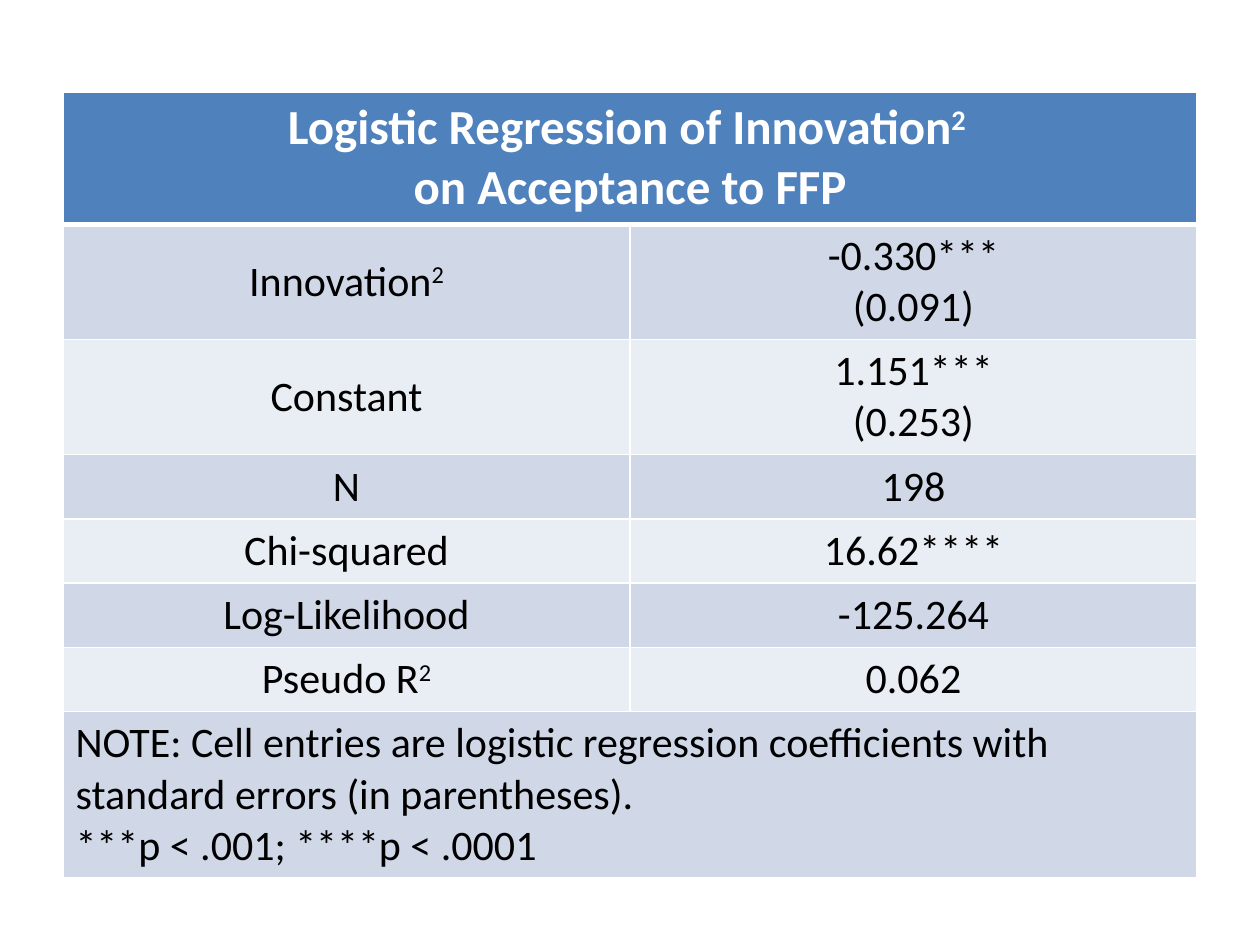
import pptx
import pptx.dml.color
import pptx.enum.text
import pptx.oxml
import pptx.oxml.ns
import pptx.util

Inches = pptx.util.Inches
CENTER = pptx.enum.text.PP_ALIGN.CENTER
LEFT = pptx.enum.text.PP_ALIGN.LEFT
MIDDLE = pptx.enum.text.MSO_ANCHOR.MIDDLE
TOP = pptx.enum.text.MSO_ANCHOR.TOP

TITLE = "Logistic Regression of Innovation^2 ^\non Acceptance to FFP"
RESULTS = [
    ("Innovation^2^", "-0.330***\n(0.091)"),
    ("Constant", "1.151***\n(0.253)"),
    ("N", "198"),
    ("Chi-squared", "16.62****"),
    ("Log-Likelihood", "-125.264"),
    ("Pseudo R^2^", "0.062"),
]
NOTE = (
    "NOTE: Cell entries are logistic regression coefficients with "
    "standard errors (in parentheses).\n***p < .001; ****p < .0001"
)
ROW_HEIGHTS = [1.03, 0.91, 0.91, 0.51, 0.51, 0.51, 0.51, 1.31]
BANDS = ["D0D8E8", "E9EDF4"]
TITLE_FONT = {"name": "Calibri", "size": pptx.util.Pt(28), "bold": True}
BODY_FONT = {"name": "Calibri", "size": pptx.util.Pt(24), "bold": False}


def color(value):
    return pptx.dml.color.RGBColor.from_string(value)


def set_borders(cell, bottom_width):
    properties = cell._tc.get_or_add_tcPr()
    widths = {"lnL": 1, "lnR": 1, "lnT": 1, "lnB": bottom_width}
    for position, (side, width) in enumerate(widths.items()):
        line = pptx.oxml.parse_xml(
            f'<a:{side} {pptx.oxml.ns.nsdecls("a")} w="{pptx.util.Pt(width)}">'
            '<a:solidFill><a:srgbClr val="FFFFFF"/></a:solidFill>'
            f"</a:{side}>"
        )
        properties.insert(position, line)


def write_paragraph(paragraph, text, font, font_color, alignment):
    paragraph.alignment = alignment
    for position, part in enumerate(text.split("^")):
        if not part:
            continue
        run = paragraph.add_run()
        run.text = part
        for name, value in font.items():
            setattr(run.font, name, value)
        run.font.color.rgb = color(font_color)
        if position % 2:
            run.font._element.set("baseline", "30000")


def fill_cell(cell, text, fill, font=BODY_FONT, font_color="000000",
              alignment=CENTER, anchor=MIDDLE, bottom_width=1):
    cell.fill.solid()
    cell.fill.fore_color.rgb = color(fill)
    cell.vertical_anchor = anchor
    set_borders(cell, bottom_width)
    for position, line in enumerate(text.split("\n")):
        frame = cell.text_frame
        paragraph = frame.add_paragraph() if position else frame.paragraphs[0]
        write_paragraph(paragraph, line, font, font_color, alignment)


def add_results_table(slide):
    table = slide.shapes.add_table(
        len(ROW_HEIGHTS), 2, Inches(0.5), Inches(0.73),
        Inches(9), Inches(sum(ROW_HEIGHTS))
    ).table
    for row, height in zip(table.rows, ROW_HEIGHTS):
        row.height = Inches(height)
    last = len(ROW_HEIGHTS) - 1
    for row_index in (0, last):
        table.cell(row_index, 0).merge(table.cell(row_index, 1))
    fill_cell(table.cell(0, 0), TITLE, "4F81BD", TITLE_FONT, "FFFFFF",
              bottom_width=3)
    for row_index, values in enumerate(RESULTS, start=1):
        for column_index, value in enumerate(values):
            fill_cell(table.cell(row_index, column_index), value,
                      BANDS[(row_index - 1) % 2])
    fill_cell(table.cell(last, 0), NOTE, BANDS[0], alignment=LEFT, anchor=TOP)


def main():
    presentation = pptx.Presentation()
    presentation.slide_width = Inches(10)
    presentation.slide_height = Inches(7.5)
    slide = presentation.slides.add_slide(presentation.slide_layouts[6])
    add_results_table(slide)
    presentation.save("out.pptx")


if __name__ == "__main__":
    main()
